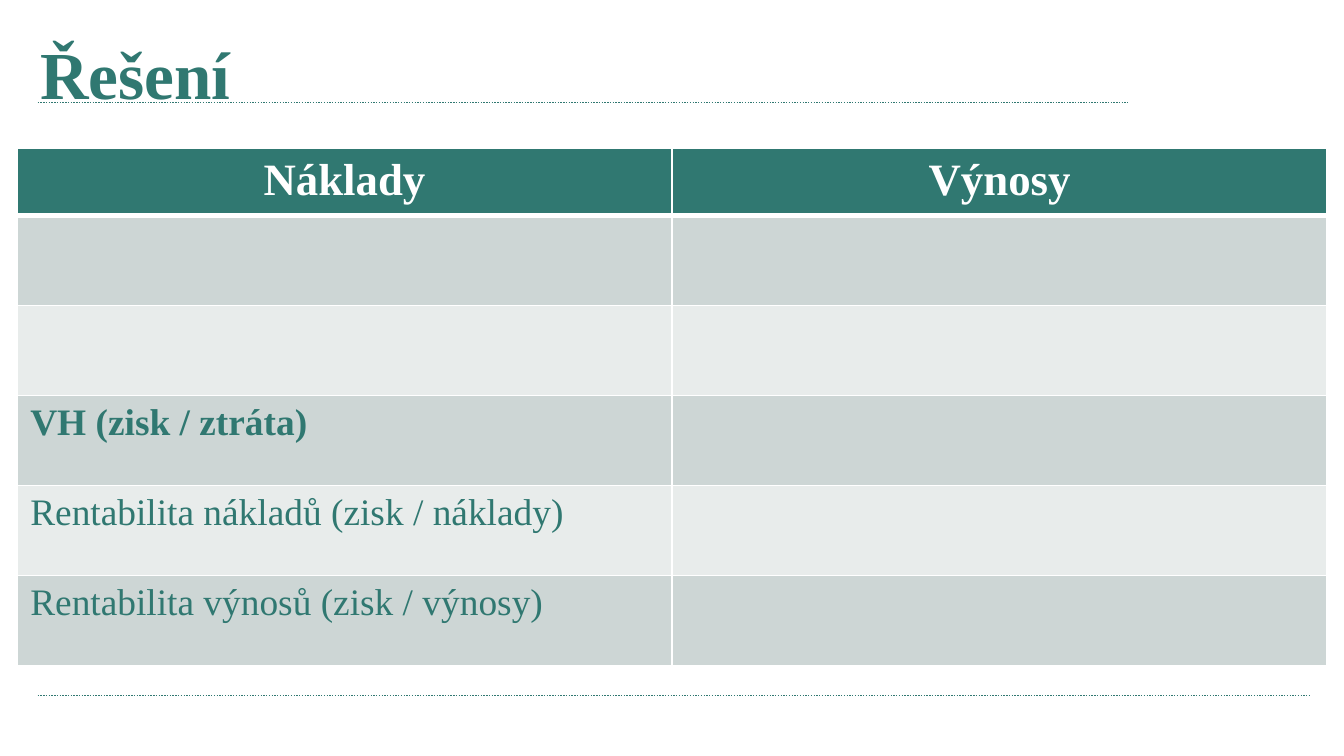
from dataclasses import dataclass

from lxml.etree import SubElement
from pptx import Presentation
from pptx.dml.color import RGBColor
from pptx.enum.dml import MSO_LINE
from pptx.enum.shapes import MSO_CONNECTOR
from pptx.enum.text import MSO_ANCHOR, PP_ALIGN
from pptx.oxml.ns import qn
from pptx.util import Pt

FACE = "Times New Roman"
TEAL, WHITE = "307871", "FFFFFF"
BANDS = ("CDD6D5", "E8ECEB")


@dataclass
class Rule:
    left: float
    right: float
    y: float


@dataclass
class Row:
    texts: tuple[str, str]
    bold: bool = False


RULES = [Rule(20.2, 604.1, 55.1), Rule(20.2, 702, 372.5)]
HEAD = Row(("Náklady", "Výnosy"), True)
BODY = [
    Row(("", "")),
    Row(("", "")),
    Row(("VH (zisk / ztráta)", ""), True),
    Row(("Rentabilita nákladů (zisk / náklady)", "")),
    Row(("Rentabilita výnosů (zisk / výnosy)", "")),
]


def color(code: str) -> RGBColor:
    return RGBColor.from_string(code)


def style(para, size: float, code: str, bold: bool) -> None:
    font = para.font
    font.name, font.size, font.bold = FACE, Pt(size), bold
    font.color.rgb = color(code)


def draw_rule(slide, rule: Rule) -> None:
    line = slide.shapes.add_connector(
        MSO_CONNECTOR.STRAIGHT,
        Pt(rule.left), Pt(rule.y), Pt(rule.right), Pt(rule.y))
    line.line.color.rgb = color(TEAL)
    line.line.width = Pt(0.75)
    line.line.dash_style = MSO_LINE.ROUND_DOT
    SubElement(line._element.spPr, qn("a:effectLst"))


def edge(cell, side: str, width: float) -> None:
    """Add a white border; call before the cell gets its fill."""
    props = cell._tc.get_or_add_tcPr()
    line = SubElement(props, qn(f"a:ln{side}"), w=str(Pt(width)))
    fill = SubElement(line, qn("a:solidFill"))
    SubElement(fill, qn("a:srgbClr"), val=WHITE)


def draw_table(slide, head: Row, body: list[Row]) -> None:
    rows = [head, *body]
    tall = [36] + [48.2] * len(body)
    table = slide.shapes.add_table(
        len(rows), 2, Pt(9), Pt(79.5), Pt(702), Pt(sum(tall))).table
    for col in table.columns:
        col.width = Pt(351)
    for i, row in enumerate(rows):
        table.rows[i].height = Pt(tall[i])
        first = i == 0
        for cell, text in zip(table.rows[i].cells, row.texts):
            for side in "LRTB":
                thick = (first and side == "B") or (i == 1 and side == "T")
                edge(cell, side, 3 if thick else 1)
            cell.fill.solid()
            cell.fill.fore_color.rgb = color(TEAL if first else BANDS[(i - 1) % 2])
            para = cell.text_frame.paragraphs[0]
            if text:
                para.text = text
            if first:
                para.alignment = PP_ALIGN.CENTER
                style(para, 24, WHITE, row.bold)
            else:
                style(para, 20, TEAL, row.bold)


def draw_title(slide, text: str) -> None:
    title = slide.shapes.title
    title.left, title.top = Pt(14.4), Pt(10.4)
    title.width, title.height = Pt(635), Pt(57)
    title.text_frame.text = text
    title.text_frame.vertical_anchor = MSO_ANCHOR.MIDDLE
    para = title.text_frame.paragraphs[0]
    para.alignment = PP_ALIGN.LEFT
    style(para, 36, TEAL, True)


def main() -> None:
    deck = Presentation()
    deck.slide_width, deck.slide_height = Pt(720), Pt(405)
    slide = deck.slides.add_slide(deck.slide_layouts[5])
    for rule in RULES:
        draw_rule(slide, rule)
    draw_title(slide, "Řešení")
    draw_table(slide, HEAD, BODY)
    deck.save("out.pptx")


if __name__ == "__main__":
    main()
